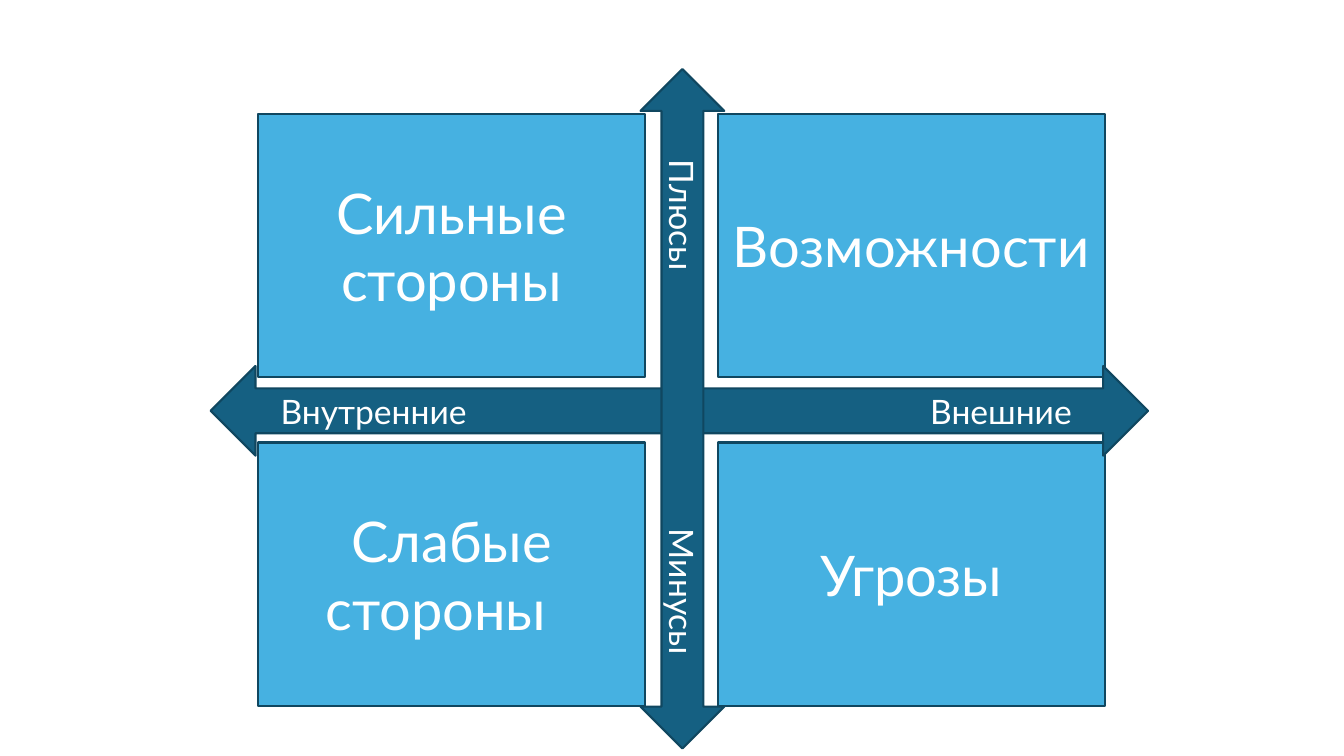
from lxml import etree
from pptx import Presentation
from pptx.dml.color import RGBColor
from pptx.enum import shapes, text
from pptx.oxml import ns
from pptx.util import Pt

COLORS = {"quadrant": "46B1E1", "axis": "156082", "outline": "104760", "label": "FFFFFF"}
QUADRANTS = [["Сильные стороны", "Возможности"], ["Слабые стороны\t", "Угрозы"]]


def color(name):
    return RGBColor.from_string(COLORS[name])


def add_block(slide, kind, box, fill):
    shape = slide.shapes.add_shape(kind, *(Pt(length) for length in box))
    shape.shadow.inherit = False
    shape.fill.solid()
    shape.fill.fore_color.rgb = color(fill)
    shape.line.color.rgb = color("outline")
    shape.line.width = Pt(1.5)
    return shape


def write_text(shape, words, size, align=text.PP_ALIGN.CENTER, left=7.2, tab=None):
    frame = shape.text_frame
    frame.word_wrap = True
    frame.vertical_anchor = text.MSO_ANCHOR.MIDDLE
    frame.margin_left = Pt(left)
    paragraph = frame.paragraphs[0]
    paragraph.alignment = align
    run = paragraph.add_run()
    run.text = words
    run.font.size = Pt(size)
    run.font.name = "Lato"
    run.font.color.rgb = color("label")
    if tab:
        stops = etree.SubElement(paragraph._p.get_or_add_pPr(), ns.qn("a:tabLst"))
        etree.SubElement(stops, ns.qn("a:tab"), pos=str(Pt(tab)), algn="l")


def add_quadrants(slide, left, top, width, height):
    cell_width, cell_height = 276.5, 188
    for row, names in enumerate(QUADRANTS):
        for column, name in enumerate(names):
            box = (left + column * (width - cell_width),
                   top + row * (height - cell_height), cell_width, cell_height)
            quadrant = add_block(slide, shapes.MSO_SHAPE.RECTANGLE, box, "quadrant")
            write_text(quadrant, name, 40)


def add_axis(slide, box, ends, left, tab, rotation=0):
    """Place one label near each end, the second at a tab stop."""
    axis = add_block(slide, shapes.MSO_SHAPE.LEFT_RIGHT_ARROW, box, "axis")
    axis.rotation = rotation
    write_text(axis, "\t".join(ends), 24, align=text.PP_ALIGN.LEFT, left=left, tab=tab)


def add_swot(slide, left, top, width, height):
    # Four quadrants
    add_quadrants(slide, left, top, width, height)
    # Crossing axes
    add_axis(slide, (left - 33.8, top + 180, 669.6, 64.1),
             ["Внутренние", "Внешние"], left=34, tab=464)
    add_axis(slide, (left + 60.5, top + 180.7, 485.3, 59.8),
             ["Плюсы", "Минусы"], left=50, tab=263.5, rotation=90)


def main():
    presentation = Presentation()
    presentation.slide_width, presentation.slide_height = Pt(960), Pt(540)
    slide = presentation.slides.add_slide(presentation.slide_layouts[6])
    add_swot(slide, 184.3, 81.4, 604.8, 422.7)
    presentation.save("out.pptx")


if __name__ == "__main__":
    main()
